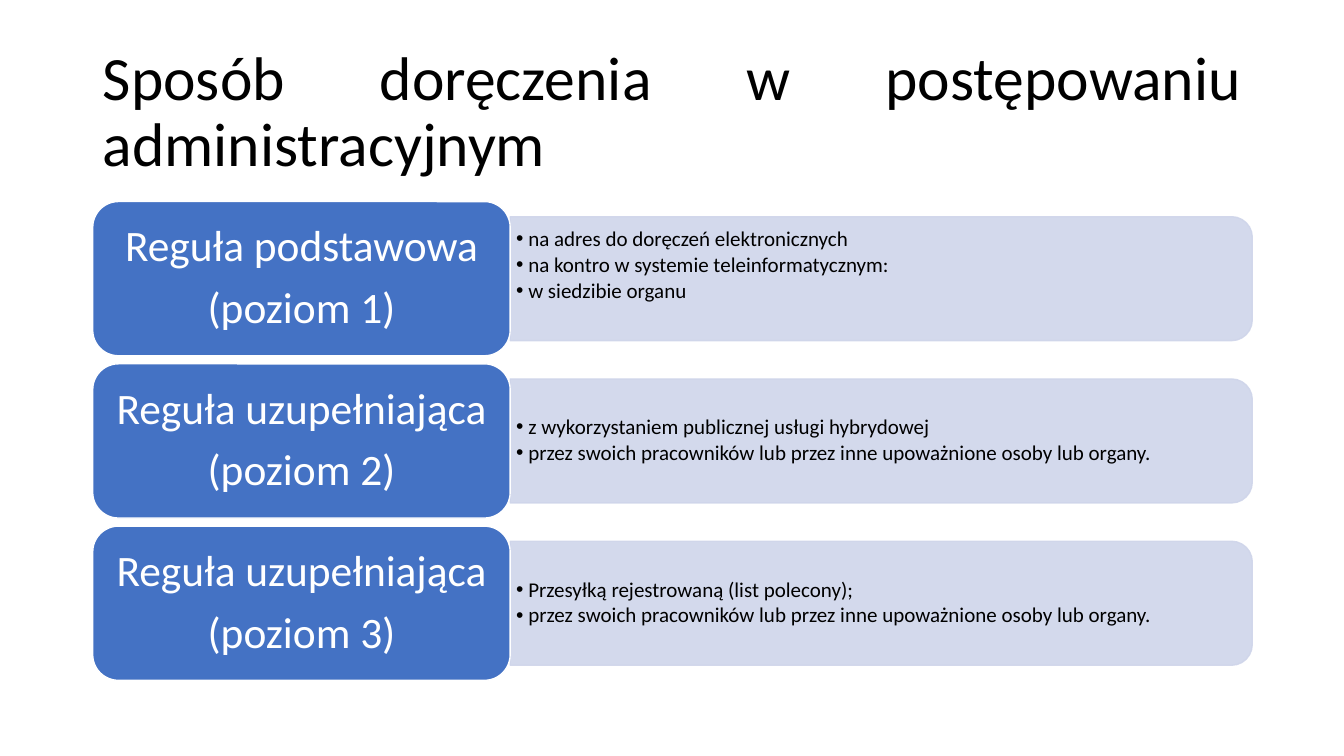
import pptx
import pptx.util
import pptx.dml.color
import pptx.enum.shapes
import pptx.enum.text
import pptx.oxml
import pptx.oxml.ns
import lxml.etree

Inches, Pt = pptx.util.Inches, pptx.util.Pt
RGB = pptx.dml.color.RGBColor.from_string
SHAPE = pptx.enum.shapes.MSO_SHAPE
ALIGN = pptx.enum.text.PP_ALIGN
qn = pptx.oxml.ns.qn

COLORS = {"text": "000000", "label": "4472C4", "bar": "CFD5EA", "white": "FFFFFF"}
LEFT, TOP, PITCH = 0.92, 2, 1.61
LABEL_W, LABEL_H = 4.14, 1.53
BAR_W, BAR_H = 7.36, 1.23
TEXT_W, TEXT_H = 7.3, 1.11
BULLET_LINE = 0.26

STAFF = "przez swoich pracowników lub przez inne upoważnione osoby lub organy."
RULES = [
    ("Reguła podstawowa", ["na adres do doręczeń elektronicznych",
                           "na kontro w systemie teleinformatycznym:",
                           "w siedzibie organu"], BULLET_LINE),
    ("Reguła uzupełniająca", ["z wykorzystaniem publicznej usługi hybrydowej", STAFF], 0),
    ("Reguła uzupełniająca", ["Przesyłką rejestrowaną (list polecony);", STAFF], 0),
]


def write(s, lines, size, color, align, after, margins):
    """Fill a shape with evenly formatted, vertically centred paragraphs."""
    tf = s.text_frame
    tf.text = "\n".join(lines)
    tf.word_wrap = True
    tf.auto_size = pptx.enum.text.MSO_AUTO_SIZE.NONE
    tf.vertical_anchor = pptx.enum.text.MSO_ANCHOR.MIDDLE
    tf.margin_left, tf.margin_top, tf.margin_right, tf.margin_bottom = map(Inches, margins)
    for p in tf.paragraphs:
        p.alignment, p.line_spacing = align, 0.9
        p.space_before, p.space_after = Pt(0), Pt(after)
        for r in p.runs:
            r.font.name, r.font.size = "Calibri", Pt(size)
            r.font.color.rgb = RGB(COLORS[color])


def paint(s, fill, line):
    s.shadow.inherit = False
    s.fill.solid()
    s.fill.fore_color.rgb = RGB(COLORS[fill])
    s.line.color.rgb = RGB(COLORS[line])
    s.line.width = Pt(1)


prs = pptx.Presentation()
prs.slide_width, prs.slide_height = Inches(13.33), Inches(7.5)
slide = prs.slides.add_slide(prs.slide_layouts[5])
shapes = slide.shapes

# Title
title = shapes.title
title.left, title.top, title.width, title.height = map(Inches, (LEFT, 0.4, 11.5, 1.45))
write(title, ["Sposób doręczenia w postępowaniu administracyjnym"], 44, "text",
      ALIGN.JUSTIFY, 0, (0.1, 0.05, 0.1, 0.05))

# One row per delivery rule
for i, (name, ways, spare) in enumerate(RULES):
    top = TOP + i * PITCH
    middle = top + LABEL_H / 2
    bar_left = LEFT + LABEL_W

    # Translucent bar, turned so that its rounded corners face right
    bar = shapes.add_shape(SHAPE.ROUND_2_SAME_RECTANGLE,
                           Inches(bar_left + (BAR_W - BAR_H) / 2), Inches(middle - BAR_W / 2),
                           Inches(BAR_H), Inches(BAR_W))
    bar.rotation = 90
    paint(bar, "bar", "bar")
    for clr in bar._element.spPr.iter(qn("a:srgbClr")):
        lxml.etree.SubElement(clr, qn("a:alpha")).set("val", "90000")

    # Bulleted ways of delivery
    box = shapes.add_textbox(Inches(bar_left), Inches(middle - TEXT_H / 2),
                             Inches(TEXT_W), Inches(TEXT_H))
    write(box, ways, 15, "text", ALIGN.LEFT, 2.25, (0.06, 0.03, 0.06, 0.03 + spare))
    for p in box.text_frame.paragraphs:
        pPr = p._p.get_or_add_pPr()
        pPr.set("marL", str(Inches(0.12)))
        pPr.set("indent", str(Inches(-0.12)))
        lxml.etree.SubElement(pPr, qn("a:buFont")).set("typeface", "Arial")
        lxml.etree.SubElement(pPr, qn("a:buChar")).set("char", "•")

    # Rule label
    label = shapes.add_shape(SHAPE.ROUNDED_RECTANGLE, Inches(LEFT), Inches(top),
                             Inches(LABEL_W), Inches(LABEL_H))
    paint(label, "label", "white")
    write(label, [name, f"(poziom {i + 1})"], 31, "white", ALIGN.CENTER, 10.5,
          (0.13, 0.06, 0.13, 0.06))

prs.save("out.pptx")
